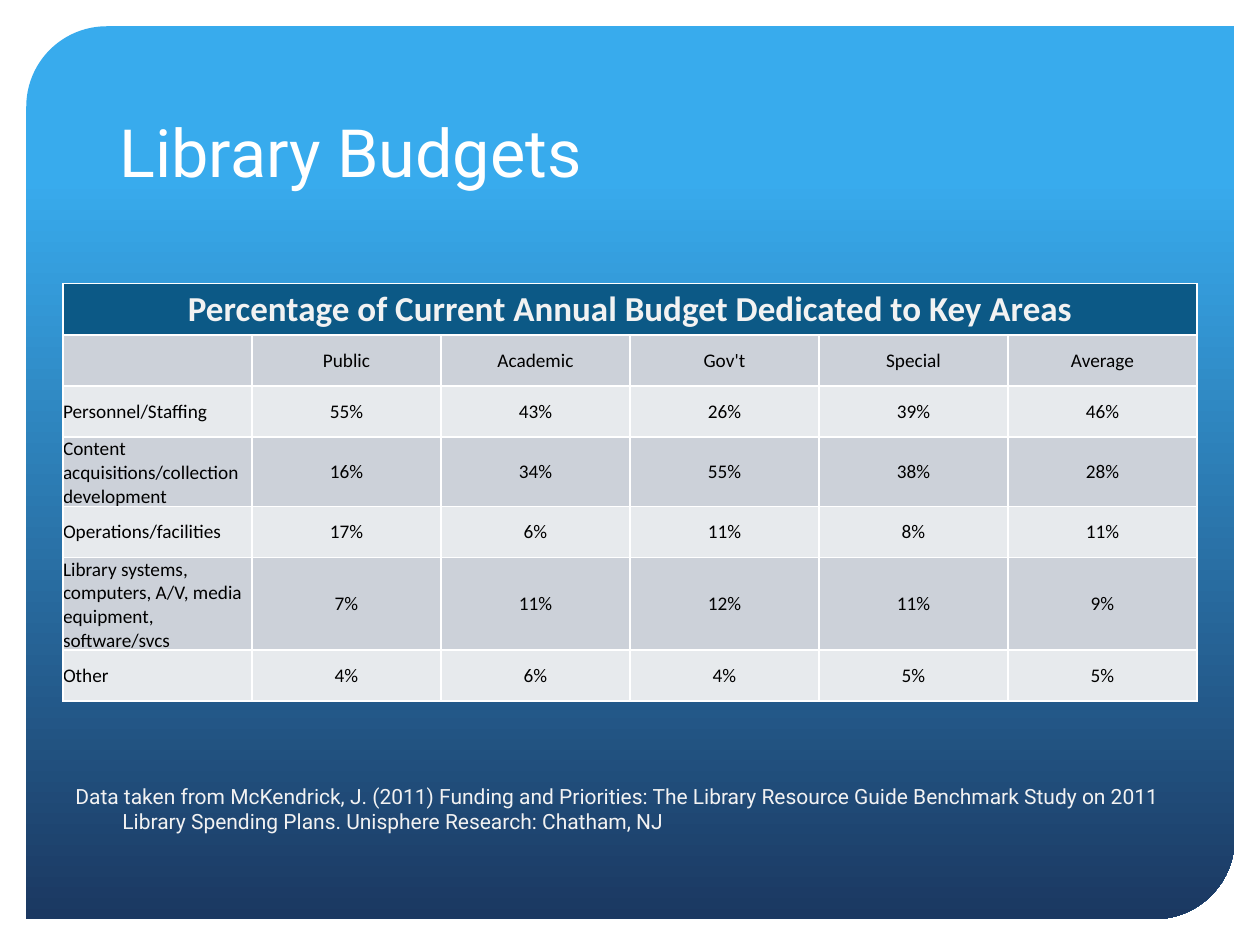
import dataclasses

import lxml.etree
import pptx
import pptx.dml.color
import pptx.enum.shapes
import pptx.enum.text
import pptx.oxml.ns
import pptx.util

Cm = pptx.util.Cm
Pt = pptx.util.Pt
RGB = pptx.dml.color.RGBColor.from_string
Align = pptx.enum.text.PP_ALIGN
Anchor = pptx.enum.text.MSO_ANCHOR
qn = pptx.oxml.ns.qn


@dataclasses.dataclass(frozen=True)
class Theme:
    sky: str = "38ABED"
    navy: str = "1B3861"
    head: str = "0C5986"
    bands: tuple = ("CCD1D9", "E7EAED")
    white: str = "FFFFFF"
    pale: str = "F2F2F2"
    black: str = "000000"
    title: dict = dataclasses.field(
        default_factory=lambda: {"name": "Roboto", "size": Pt(38)})
    note: dict = dataclasses.field(
        default_factory=lambda: {"name": "Roboto", "size": Pt(12)})
    top: dict = dataclasses.field(
        default_factory=lambda: {"name": "Calibri", "size": Pt(20), "bold": True})
    body: dict = dataclasses.field(
        default_factory=lambda: {"name": "Calibri", "size": Pt(11), "bold": False})


theme = Theme()


def write(frame, text, form, color, align=Align.LEFT):
    para = frame.paragraphs[0]
    para.alignment = align
    run = para.add_run()
    run.text = text
    for key, value in form.items():
        setattr(run.font, key, value)
    run.font.color.rgb = RGB(color)
    return para


def dress(cell, color):
    """Give a cell its white borders, fill, zero margins and middle anchor."""
    props = cell._tc.get_or_add_tcPr()
    for side in ("lnL", "lnR", "lnT", "lnB"):
        line = lxml.etree.SubElement(props, qn("a:" + side), w=str(Pt(1)))
        solid = lxml.etree.SubElement(line, qn("a:solidFill"))
        lxml.etree.SubElement(solid, qn("a:srgbClr"), val=theme.white)
    cell.fill.solid()
    cell.fill.fore_color.rgb = RGB(color)
    cell.vertical_anchor = Anchor.MIDDLE
    for side in ("left", "right", "top", "bottom"):
        setattr(cell, "margin_" + side, 0)


deck = pptx.Presentation()
deck.slide_width, deck.slide_height = Cm(25.4), Cm(19.05)
slide = deck.slides.add_slide(deck.slide_layouts[6])
shapes = slide.shapes

# Background panel
panel = shapes.add_shape(
    pptx.enum.shapes.MSO_SHAPE.ROUND_2_DIAG_RECTANGLE,
    Cm(0.53), Cm(0.53), Cm(24.36), Cm(18))
panel.adjustments[0] = 0.09
panel.adjustments[1] = 0
panel.shadow.inherit = False
panel.line.fill.background()
panel.fill.gradient()
panel.fill.gradient_angle = 270
stops = ((0.17, theme.sky), (1, theme.navy))
for stop, (place, color) in zip(panel.fill.gradient_stops, stops):
    stop.position = place
    stop.color.rgb = RGB(color)

# Title
title = shapes.add_textbox(Cm(2.16), Cm(1.07), Cm(21.06), Cm(2.9)).text_frame
title.word_wrap = True
title.vertical_anchor = Anchor.BOTTOM
write(title, "Library Budgets", theme.title, theme.white)

# Budget table
rows = (
    ("", "Public", "Academic", "Gov't", "Special", "Average"),
    ("Personnel/Staffing", "55%", "43%", "26%", "39%", "46%"),
    ("Content acquisitions/collection development",
     "16%", "34%", "55%", "38%", "28%"),
    ("Operations/facilities", "17%", "6%", "11%", "8%", "11%"),
    ("Library systems, computers, A/V, media equipment, software/svcs",
     "7%", "11%", "12%", "11%", "9%"),
    ("Other", "4%", "6%", "4%", "5%", "5%"),
)
count, width = len(rows) + 1, len(rows[0])
table = shapes.add_table(
    count, width, Cm(1.27), Cm(5.72), Cm(22.86), Cm(1.03 * count)).table
table.first_row = table.horz_banding = False

for cell in table.rows[0].cells:
    dress(cell, theme.head)
head = table.cell(0, 0)
head.merge(table.cell(0, width - 1))
write(head.text_frame, "Percentage of Current Annual Budget Dedicated to Key Areas",
      theme.top, theme.pale, Align.CENTER)

for r, row in enumerate(rows):
    for c, text in enumerate(row):
        cell = table.cell(r + 1, c)
        dress(cell, theme.bands[r % 2])
        if text:
            write(cell.text_frame, text, theme.body, theme.black,
                  Align.CENTER if c else Align.LEFT)

# Source note with hanging indent
note = shapes.add_textbox(Cm(1.27), Cm(15.67), Cm(22.43), Cm(1.35)).text_frame
note.word_wrap = True
para = write(
    note,
    "Data taken from McKendrick, J. (2011) Funding and Priorities: The Library "
    "Resource Guide Benchmark Study on 2011 Library Spending Plans. "
    "Unisphere Research: Chatham, NJ",
    theme.note, theme.pale)
hang = Cm(0.95)
para._p.get_or_add_pPr().set("marL", str(hang))
para._p.get_or_add_pPr().set("indent", str(-hang))

deck.save("out.pptx")
